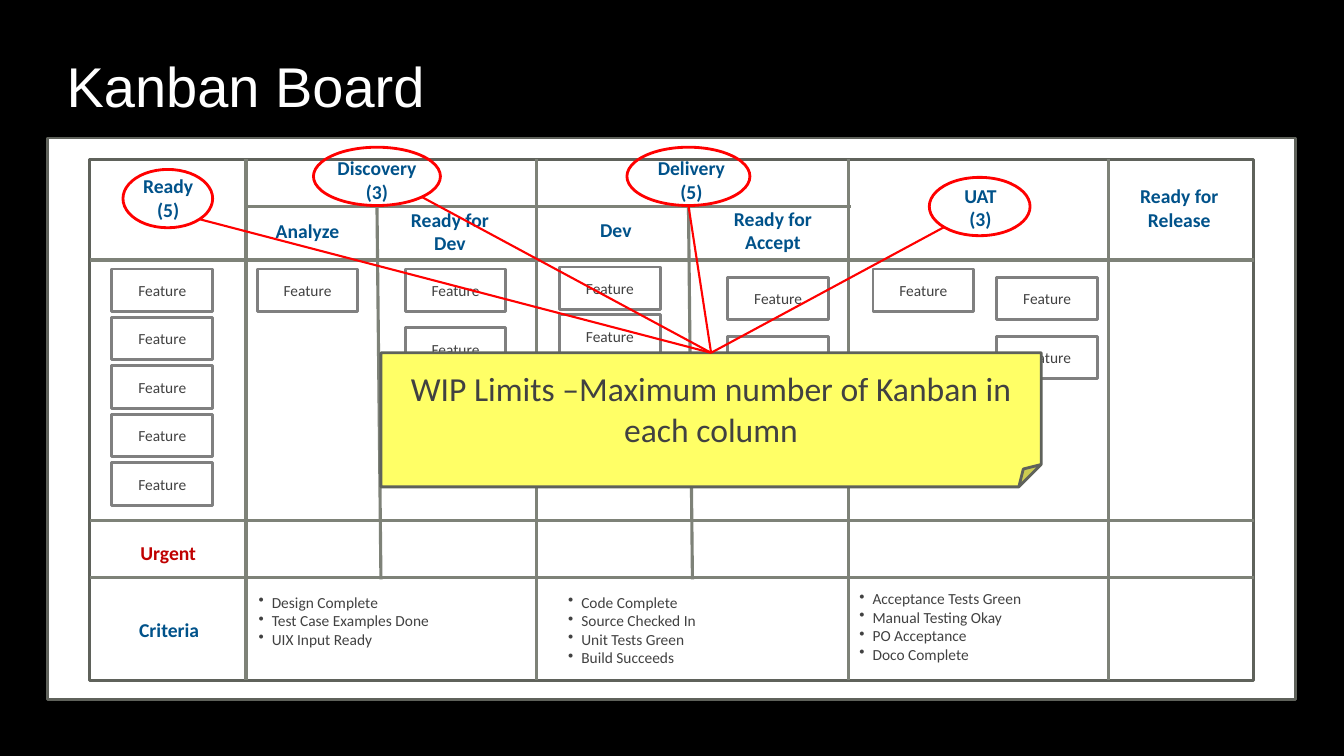
from math import sqrt

from lxml.etree import SubElement
from pptx import Presentation
from pptx.dml.color import RGBColor
from pptx.enum.shapes import MSO_CONNECTOR, MSO_SHAPE
from pptx.enum.text import MSO_ANCHOR, MSO_AUTO_SIZE, PP_ALIGN
from pptx.oxml.ns import qn
from pptx.util import Cm, Pt

BLACK = RGBColor(0x00, 0x00, 0x00)
WHITE = RGBColor(0xFF, 0xFF, 0xFF)
FRAME = RGBColor(0x5F, 0x62, 0x5B)
GRID = RGBColor(0x7E, 0x82, 0x78)
CARD_EDGE = RGBColor(0x80, 0x80, 0x80)
INK = RGBColor(0x41, 0x41, 0x41)
BLUE = RGBColor(0x00, 0x52, 0x8A)
DARK_RED = RGBColor(0xC0, 0x00, 0x00)
RED = RGBColor(0xFF, 0x00, 0x00)
YELLOW = RGBColor(0xFF, 0xFF, 0x66)

prs = Presentation()
prs.slide_width, prs.slide_height = Cm(33.87), Cm(19.05)
slide = prs.slides.add_slide(prs.slide_layouts[5])
slide.background.fill.solid()
slide.background.fill.fore_color.rgb = BLACK


def draw_shape(kind, box, edge, fill=None, text="", size=11):
    shape = slide.shapes.add_shape(kind, *[Cm(v) for v in box])
    shape.shadow.inherit = False
    if fill is None:
        shape.fill.background()
    else:
        shape.fill.solid()
        shape.fill.fore_color.rgb = fill
    shape.line.color.rgb = edge
    shape.line.width = Pt(2)
    if text:
        shape.text_frame.text = text
        shape.text_frame.vertical_anchor = MSO_ANCHOR.MIDDLE
        label = shape.text_frame.paragraphs[0]
        label.alignment = PP_ALIGN.CENTER
        label.font.name, label.font.size = "Calibri", Pt(size)
        label.font.color.rgb = INK
    return shape


def draw_line(x1, y1, x2, y2, color=GRID, width=2.25):
    line = slide.shapes.add_connector(
        MSO_CONNECTOR.STRAIGHT, Cm(x1), Cm(y1), Cm(x2), Cm(y2))
    line.line.color.rgb = color
    line.line.width = Pt(width)
    SubElement(line._element.spPr, qn("a:effectLst"))
    return line


# Title
title = slide.shapes.title
title.left, title.top, title.width, title.height = Cm(1.35), Cm(1.09), Cm(32.46), Cm(2.11)
heading = title.text_frame
heading.text = "Kanban Board"
heading.vertical_anchor = MSO_ANCHOR.MIDDLE
heading.margin_left = heading.margin_right = Cm(0.33)
heading.margin_top = heading.margin_bottom = Cm(0.18)
heading.paragraphs[0].alignment = PP_ALIGN.LEFT
heading.paragraphs[0].font.name = "Arial"
heading.paragraphs[0].font.size = Pt(40)
heading.paragraphs[0].font.color.rgb = WHITE

# Board frame and grid
LEFT, TOP, RIGHT, BOTTOM = 2.26, 4.01, 31.6, 17.14
draw_shape(MSO_SHAPE.RECTANGLE, (1.19, 3.48, 31.47, 14.15), FRAME, WHITE)
draw_shape(MSO_SHAPE.RECTANGLE, (LEFT, TOP, RIGHT - LEFT, BOTTOM - TOP), FRAME)
for y in (6.55, 13.11, 14.55):
    draw_line(LEFT, y, RIGHT, y)
for x in (6.2, 13.51, 21.39, 27.94):
    draw_line(x, TOP, x, BOTTOM)
draw_line(6.2, 5.21, 21.44, 5.21)
for x in (9.5, 17.35):
    draw_line(x, 5.18, x + 0.1, 14.6)

# Column and row headings: text, left, top, width, colour
HEADINGS = [
    ("Ready\v(5)", 2.26, 4.27, 3.96, BLUE),
    ("Discovery\v(3)", 6.68, 3.81, 5.64, BLUE),
    ("Delivery\v(5)", 14.81, 3.81, 5.23, BLUE),
    ("UAT\v(3)", 22.45, 4.5, 4.52, BLUE),
    ("Ready for Release", 27.94, 4.52, 3.56, BLUE),
    ("Analyze", 5.92, 5.38, 3.66, BLUE),
    ("Ready for\vDev", 8.66, 5.11, 5.36, BLUE),
    ("Dev", 13.54, 5.36, 3.96, BLUE),
    ("Ready for Accept", 17.5, 5.08, 3.96, BLUE),
    ("Urgent", 2.26, 13.51, 3.96, DARK_RED),
    ("Criteria", 2.36, 15.44, 3.81, BLUE),
]
for text, x, y, width, color in HEADINGS:
    height = 1.45 if "\v" in text or "Ready" in text else 0.86
    frame = slide.shapes.add_textbox(Cm(x), Cm(y), Cm(width), Cm(height)).text_frame
    frame.word_wrap = True
    frame.auto_size = MSO_AUTO_SIZE.SHAPE_TO_FIT_TEXT
    frame.text = text
    label = frame.paragraphs[0]
    label.alignment = PP_ALIGN.CENTER
    label.font.name, label.font.size, label.font.bold = "Calibri", Pt(14), True
    label.font.color.rgb = color

# Feature cards: left, first top, step, count
CARD_STACKS = [
    (2.82, 6.78, 1.22, 5),
    (6.48, 6.78, 0, 1),
    (10.21, 6.78, 1.48, 2),
    (14.1, 6.73, 1.2, 3),
    (18.34, 6.99, 1.48, 2),
    (22, 6.78, 0, 1),
    (25.12, 6.99, 1.48, 2),
]
for x, first, step, count in CARD_STACKS:
    for i in range(count):
        draw_shape(MSO_SHAPE.RECTANGLE, (x, first + i * step, 2.54, 1.07),
                   CARD_EDGE, WHITE, "Feature")

# Exit criteria lists
CRITERIA = [
    (6.27, 14.81, 7.37, ["Design Complete", "Test Case Examples Done", "UIX Input Ready"]),
    (14.07, 14.81, 6.81, ["Code Complete", "Source Checked In", "Unit Tests Green",
                          "Build Succeeds"]),
    (21.41, 14.73, 6.81, ["Acceptance Tests Green", "Manual Testing Okay",
                          "PO Acceptance", "Doco Complete"]),
]
for x, y, width, items in CRITERIA:
    height = 0.25 + 0.47 * len(items)
    frame = slide.shapes.add_textbox(Cm(x), Cm(y), Cm(width), Cm(height)).text_frame
    frame.word_wrap = True
    frame.auto_size = MSO_AUTO_SIZE.SHAPE_TO_FIT_TEXT
    frame.text = "\n".join(items)
    for item in frame.paragraphs:
        item.font.name, item.font.size = "Calibri", Pt(11)
        item.font.color.rgb = INK
        props = item._p.get_or_add_pPr()
        props.set("marL", str(Cm(0.33)))
        props.set("indent", str(-Cm(0.33)))
        bullet = props.makeelement(qn("a:buChar"), {"char": "•"})
        props.insert(0, bullet)

# Note on the limits
note = draw_shape(MSO_SHAPE.FOLDED_CORNER, (9.6, 8.89, 16.64, 3.38), FRAME, YELLOW,
                  "WIP Limits –Maximum number of Kanban in each column", 24)

# Limit rings: left, top, width, and direction in which the line leaves
DIAGONAL = sqrt(0.5)
RING_HEIGHT = 1.47
LIMITS = [
    (3.1, 4.27, 2.26, DIAGONAL, DIAGONAL),
    (7.9, 3.71, 3.2, DIAGONAL, DIAGONAL),
    (15.8, 3.71, 3.1, 0, 1),
    (23.42, 4.47, 2.54, -DIAGONAL, DIAGONAL),
]
for x, y, width, dx, dy in LIMITS:
    pointer = draw_line(x + width / 2 * (1 + dx), y + RING_HEIGHT / 2 * (1 + dy),
                        17.92, 8.89, RED, 1.5)
    pointer.end_connect(note, 0)
    draw_shape(MSO_SHAPE.OVAL, (x, y, width, RING_HEIGHT), RED)

prs.save("out.pptx")
